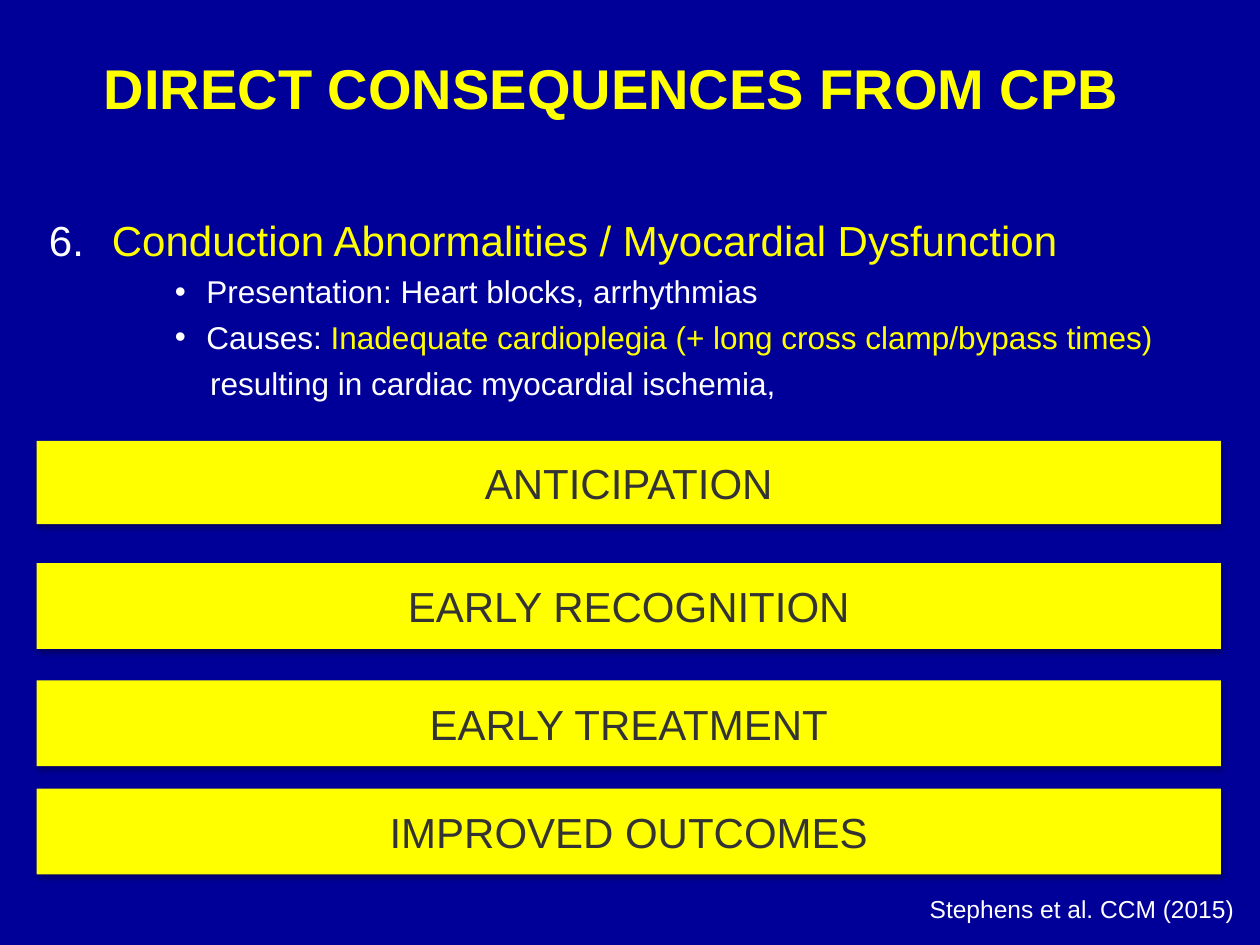
"""Build the slide on direct consequences from CPB."""
from dataclasses import dataclass

import lxml.etree
import pptx
import pptx.dml.color
import pptx.enum.shapes
import pptx.enum.text
import pptx.oxml.ns
import pptx.util

Inches = pptx.util.Inches
Align = pptx.enum.text.PP_ALIGN
Anchor = pptx.enum.text.MSO_ANCHOR


@dataclass(frozen=True)
class Theme:
    font: str = "Arial"
    navy: str = "000099"
    yellow: str = "FFFF00"
    white: str = "FFFFFF"
    charcoal: str = "333333"
    title_size: int = 32
    heading_size: int = 24
    detail_size: int = 18
    citation_size: int = 14


@dataclass(frozen=True)
class Span:
    text: str
    color: str


@dataclass(frozen=True)
class Line:
    spans: tuple[Span, ...]
    size: int
    margin: float
    hanging: float = 0
    level: int = 0
    bullet: tuple[str, dict[str, str]] | None = None
    space_before: float = 0


@dataclass(frozen=True)
class Bar:
    text: str
    top: float
    height: float = 0.68


THEME = Theme()
LEFT, WIDTH = 0.29, 9.4
DOT = ("buChar", {"char": "•"})
NUMBER = ("buAutoNum", {"type": "arabicPeriod", "startAt": "6"})


def detail(*spans: Span, margin: float = 1.25, hanging: float = 0.25, bullet=DOT) -> Line:
    """Describe a second-level line."""
    return Line(spans, THEME.detail_size, margin, hanging, 2, bullet, 4.5)


LINES = (
    Line((Span("Conduction Abnormalities / Myocardial Dysfunction", THEME.yellow),),
         THEME.heading_size, 0.5, 0.5, bullet=NUMBER),
    detail(Span("Presentation: Heart blocks, arrhythmias", THEME.white)),
    detail(Span("Causes: ", THEME.white),
           Span("Inadequate cardioplegia (+ long cross clamp/bypass times)", THEME.yellow)),
    detail(Span("resulting in cardiac myocardial ischemia,", THEME.white),
           margin=1.28, hanging=0, bullet=None),
)
BARS = (
    Bar("ANTICIPATION", 3.5, 0.66),
    Bar("EARLY RECOGNITION", 4.47),
    Bar("EARLY TREATMENT", 5.4),
    Bar("IMPROVED OUTCOMES", 6.26),
)


def rgb(value: str) -> pptx.dml.color.RGBColor:
    """Turn a hex string into a colour."""
    return pptx.dml.color.RGBColor.from_string(value)


def add_element(parent, tag: str, **attributes: str):
    """Append a DrawingML element."""
    return lxml.etree.SubElement(parent, pptx.oxml.ns.qn(f"a:{tag}"), attributes)


def format_font(font, size: int, color: str, bold: bool = False) -> None:
    """Apply the theme font with a size and colour."""
    font.name = THEME.font
    font.size = pptx.util.Pt(size)
    font.bold = bold
    font.color.rgb = rgb(color)


def write_text(shape, text: str, size: int, color: str, align, anchor, bold: bool = False) -> None:
    """Fill a shape with one formatted paragraph."""
    frame = shape.text_frame
    frame.text = text
    frame.word_wrap = True
    frame.vertical_anchor = anchor
    para = frame.paragraphs[0]
    para.alignment = align
    format_font(para.runs[0].font, size, color, bold)


def add_title(page, text: str) -> None:
    """Place and format the title placeholder."""
    title = page.shapes.title
    title.left, title.top = Inches(0.07), Inches(0.23)
    title.width, title.height = Inches(9.57), Inches(0.78)
    write_text(title, text, THEME.title_size, THEME.yellow, Align.CENTER, Anchor.BOTTOM, True)


def write_line(para, line: Line) -> None:
    """Write a line with its indent, bullet and coloured spans."""
    para.level = line.level
    properties = para._p.get_or_add_pPr()
    properties.set("marL", str(Inches(line.margin)))
    properties.set("indent", str(-Inches(line.hanging)))
    if line.bullet:
        tag, attributes = line.bullet
        add_element(add_element(properties, "buClr"), "srgbClr", val=THEME.white)
        add_element(properties, "buFont", typeface=THEME.font)
        add_element(properties, tag, **attributes)
    para.space_before = pptx.util.Pt(line.space_before)
    for span in line.spans:
        run = para.add_run()
        run.text = span.text
        format_font(run.font, line.size, span.color)


def add_body(page, lines: tuple[Line, ...]) -> None:
    """Add the numbered heading and its details."""
    box = page.shapes.add_textbox(Inches(LEFT), Inches(1.65), Inches(WIDTH), Inches(5.44))
    frame = box.text_frame
    frame.word_wrap = True
    for index, line in enumerate(lines):
        write_line(frame.add_paragraph() if index else frame.paragraphs[0], line)


def add_bar(page, bar: Bar) -> None:
    """Add a yellow bar with a soft shadow below it."""
    shape = page.shapes.add_shape(
        pptx.enum.shapes.MSO_SHAPE.RECTANGLE,
        Inches(LEFT), Inches(bar.top), Inches(WIDTH), Inches(bar.height))
    shape.fill.solid()
    shape.fill.fore_color.rgb = rgb(THEME.yellow)
    shape.line.fill.background()
    shape.shadow.inherit = False
    effects = shape._element.spPr.find(pptx.oxml.ns.qn("a:effectLst"))
    shadow = add_element(effects, "outerShdw", blurRad="40000", dist="23000",
                         dir="5400000", rotWithShape="0")
    add_element(add_element(shadow, "srgbClr", val="000000"), "alpha", val="35000")
    write_text(shape, bar.text, THEME.heading_size, THEME.charcoal, Align.CENTER, Anchor.MIDDLE)


def add_citation(page, text: str) -> None:
    """Add the source line at the lower right."""
    box = page.shapes.add_textbox(Inches(7.28), Inches(7.05), Inches(2.72), Inches(0.34))
    write_text(box, text, THEME.citation_size, THEME.white, Align.LEFT, Anchor.TOP)


def main() -> None:
    """Build and save the deck."""
    deck = pptx.Presentation()
    deck.slide_width, deck.slide_height = Inches(10), Inches(7.5)
    page = deck.slides.add_slide(deck.slide_layouts.get_by_name("Title Only"))
    page.background.fill.solid()
    page.background.fill.fore_color.rgb = rgb(THEME.navy)
    add_title(page, "DIRECT CONSEQUENCES FROM CPB")
    add_body(page, LINES)
    add_citation(page, "Stephens et al. CCM (2015)")
    for bar in BARS:
        add_bar(page, bar)
    deck.save("out.pptx")


if __name__ == "__main__":
    main()
